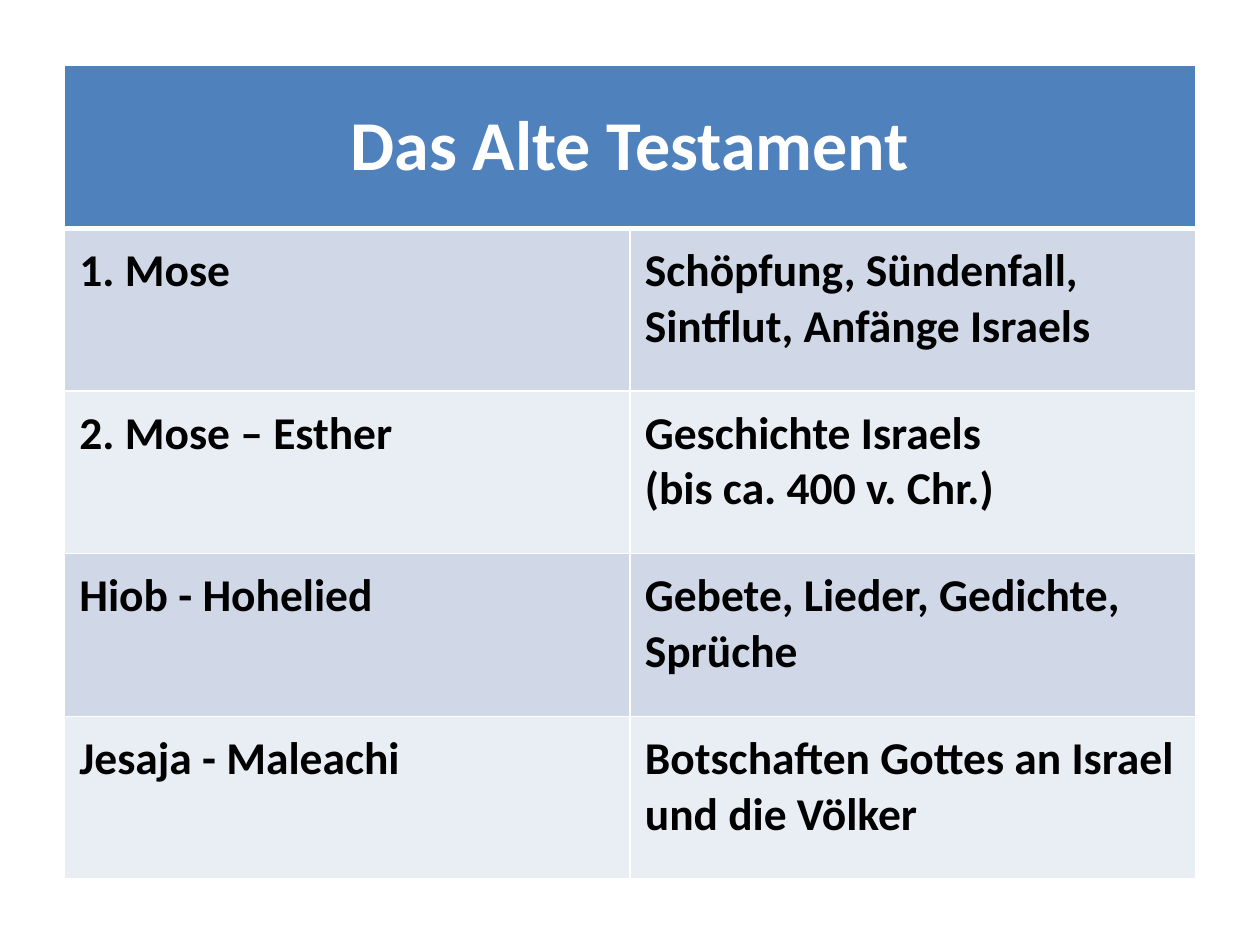
import pptx
import pptx.util
import pptx.dml.color
import pptx.enum.text
import pptx.oxml.ns
from lxml import etree

Cm, Pt = pptx.util.Cm, pptx.util.Pt
RGB = pptx.dml.color.RGBColor.from_string

# Content: heading, then one (books, theme lines) pair per row
HEADING = "Das Alte Testament"
ROWS = [
    ("1. Mose", "Schöpfung, Sündenfall,\nSintflut, Anfänge Israels"),
    ("2. Mose – Esther", "Geschichte Israels\n(bis ca. 400 v. Chr.)"),
    ("Hiob - Hohelied", "Gebete, Lieder, Gedichte, Sprüche"),
    ("Jesaja - Maleachi", "Botschaften Gottes an Israel und die Völker"),
]

THEME = {
    "font": "Calibri",
    "heading_size": 40, "body_size": 26,
    "heading_color": "FFFFFF", "body_color": "000000",
    "heading_fill": "4F81BD", "bands": ("D0D8E8", "E9EDF4"),
    "border": "FFFFFF",
}
LEFT, TOP = 1.3, 1.32
COL_W, ROW_H = 11.4, 3.28


def set_borders(cell, bottom=1, top=1):
    tcPr = cell._tc.get_or_add_tcPr()
    for side, width in (("L", 1), ("R", 1), ("T", top), ("B", bottom)):
        ln = etree.SubElement(tcPr, pptx.oxml.ns.qn(f"a:ln{side}"), w=str(Pt(width)))
        fill = etree.SubElement(ln, pptx.oxml.ns.qn("a:solidFill"))
        etree.SubElement(fill, pptx.oxml.ns.qn("a:srgbClr"), val=THEME["border"])


def paint(cell, color):
    cell.fill.solid()
    cell.fill.fore_color.rgb = RGB(color)


def write(cell, text, size, color):
    p = cell.text_frame.paragraphs[0]
    for i, line in enumerate(text.split("\n")):
        if i:
            p.add_line_break()
        r = p.add_run()
        r.text = line
        r.font.name = THEME["font"]
        r.font.size = Pt(size)
        r.font.bold = True
        r.font.color.rgb = RGB(color)
    return p


prs = pptx.Presentation()
prs.slide_width, prs.slide_height = Cm(25.4), Cm(19.05)
s = prs.slides.add_slide(prs.slide_layouts[6])

# Table grid
n_rows, n_cols = len(ROWS) + 1, 2
table = s.shapes.add_table(n_rows, n_cols, Cm(LEFT), Cm(TOP),
                           Cm(COL_W * n_cols), Cm(ROW_H * n_rows)).table
for col in table.columns:
    col.width = Cm(COL_W)
for row in table.rows:
    row.height = Cm(ROW_H)

# Heading row across both columns
heading = table.cell(0, 0)
heading.merge(table.cell(0, n_cols - 1))
for cell in table.rows[0].cells:
    set_borders(cell, bottom=3)
    paint(cell, THEME["heading_fill"])
heading.vertical_anchor = pptx.enum.text.MSO_ANCHOR.MIDDLE
p = write(heading, HEADING, THEME["heading_size"], THEME["heading_color"])
p.alignment = pptx.enum.text.PP_ALIGN.CENTER

# Banded body rows
for i, texts in enumerate(ROWS):
    for j, text in enumerate(texts):
        cell = table.cell(i + 1, j)
        set_borders(cell, top=1 if i else 3)
        paint(cell, THEME["bands"][i % 2])
        cell.margin_left = cell.margin_top = Cm(0.3)
        cell.margin_right, cell.margin_bottom = Cm(0.4), Cm(0.2)
        write(cell, text, THEME["body_size"], THEME["body_color"])

prs.save("out.pptx")
